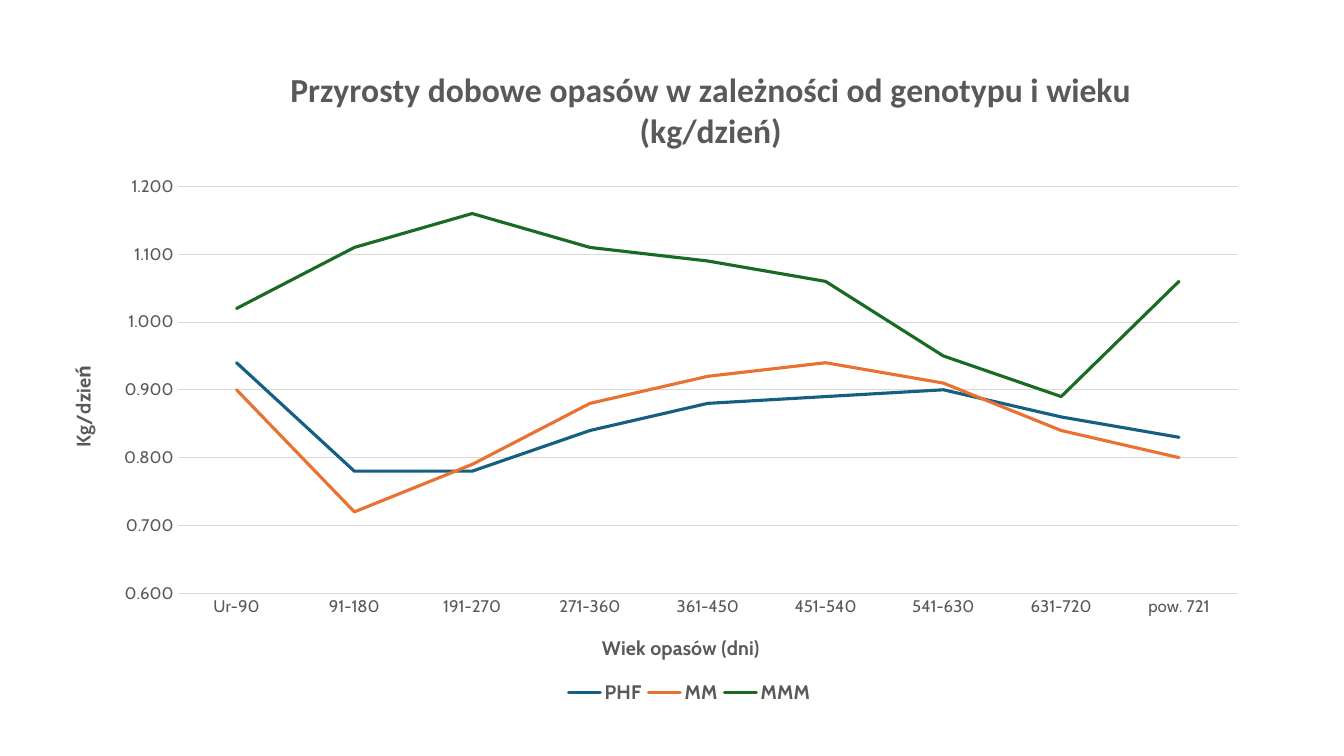
from lxml import etree
from pptx import Presentation
from pptx import util as u
from pptx.chart.data import CategoryChartData
from pptx.dml.color import RGBColor
from pptx.enum import chart as ch
from pptx.oxml.ns import qn

TEXT, GRID = "595959", "D9D9D9"


def set_format(target, values, color):
    """Set the attributes of a font or line, then its colour."""
    for name, value in values.items():
        setattr(target, name, value)
    target.color.rgb = RGBColor.from_string(color)


def place(element, index, **fractions):
    """Place a chart part by fractions of the chart area."""
    for old in element.findall(qn("c:layout")):
        element.remove(old)
    layout = etree.Element(qn("c:layout"))
    manual = etree.SubElement(layout, qn("c:manualLayout"))
    if element.tag == qn("c:plotArea"):
        etree.SubElement(manual, qn("c:layoutTarget")).set("val", "inner")
    for side in "xy":
        etree.SubElement(manual, qn(f"c:{side}Mode")).set("val", "edge")
    for name, value in fractions.items():
        etree.SubElement(manual, qn(f"c:{name}")).set("val", str(value))
    element.insert(index, layout)


presentation = Presentation()
presentation.slide_width = u.Inches(13.33)
presentation.slide_height = u.Inches(7.5)
slide = presentation.slides.add_slide(presentation.slide_layouts[6])

# Daily gains by genotype and age
gains = {
    "PHF": ("156082", [0.94, 0.78, 0.78, 0.84, 0.88, 0.89, 0.9, 0.86, 0.83]),
    "MM": ("E97132", [0.9, 0.72, 0.79, 0.88, 0.92, 0.94, 0.91, 0.84, 0.8]),
    "MMM": ("196B24", [1.02, 1.11, 1.16, 1.11, 1.09, 1.06, 0.95, 0.89, 1.06]),
}
data = CategoryChartData(number_format="###0.000")
data.categories = ["Ur-90", "91-180", "191-270", "271-360", "361-450",
                   "451-540", "541-630", "631-720", "pow. 721"]
for genotype, (color, values) in gains.items():
    data.add_series(genotype, values)

chart = slide.shapes.add_chart(
    ch.XL_CHART_TYPE.LINE, u.Inches(0.46), u.Inches(0.52),
    u.Inches(12.06), u.Inches(6.65), data).chart
set_format(chart.font, {"name": "Cabin", "size": u.Pt(12)}, TEXT)
chart.plots[0].vary_by_categories = False
place(chart.plots[0]._element.getparent(), 0, x=0.108, y=0.2, w=0.872, h=0.607)

# Lines with round ends
for series in chart.plots[0].series:
    series.smooth = False
    series.marker.style = ch.XL_MARKER_STYLE.NONE
    set_format(series.format.line, {"width": u.Pt(2.25)}, gains[series.name][0])
    series._element.find(qn("c:spPr")).find(qn("a:ln")).set("cap", "rnd")

# Axes
age_axis, gain_axis = chart.category_axis, chart.value_axis
for axis in (age_axis, gain_axis):
    axis.major_tick_mark = axis.minor_tick_mark = ch.XL_TICK_MARK.NONE
    set_format(axis.tick_labels.font, {"name": "Cabin", "size": u.Pt(12)}, TEXT)
gain_axis.minimum_scale, gain_axis.maximum_scale = 0.6, 1.2
gain_axis.major_unit = 0.1
gain_axis.tick_labels.number_format = "###0.000"
gain_axis.tick_labels.number_format_is_linked = False
gain_axis.format.line.fill.background()
for line in (age_axis.format.line, gain_axis.major_gridlines.format.line):
    set_format(line, {"width": u.Pt(0.75)}, GRID)

# Chart and axis titles
titles = [
    (chart, "Przyrosty dobowe opasów w zależności od genotypu i wieku (kg/dzień)",
     "Calibri", 24, 0.169, 0.013),
    (age_axis, "Wiek opasów (dni)", "Cabin", 14, 0.454, 0.862),
    (gain_axis, "Kg/dzień", "Cabin", 14, 0.016, 0.462),
]
for owner, wording, font, size, x, y in titles:
    title = owner.chart_title if owner is chart else owner.axis_title
    title.text_frame.text = wording
    set_format(title.text_frame.paragraphs[0].runs[0].font,
               {"name": font, "size": u.Pt(size), "bold": True}, TEXT)
    place(title._element, 1, x=x, y=y)
gain_body = gain_axis.axis_title._element.find(".//" + qn("a:bodyPr"))
gain_body.set("rot", "-5400000")
gain_body.set("vert", "horz")

# Legend
chart.has_legend = True
chart.legend.position = ch.XL_LEGEND_POSITION.BOTTOM
chart.legend.include_in_layout = False
set_format(chart.legend.font, {"name": "Cabin", "size": u.Pt(14), "bold": True}, TEXT)
place(chart.legend._element, 1, x=0.424, y=0.93, w=0.21, h=0.05)

presentation.save("out.pptx")
